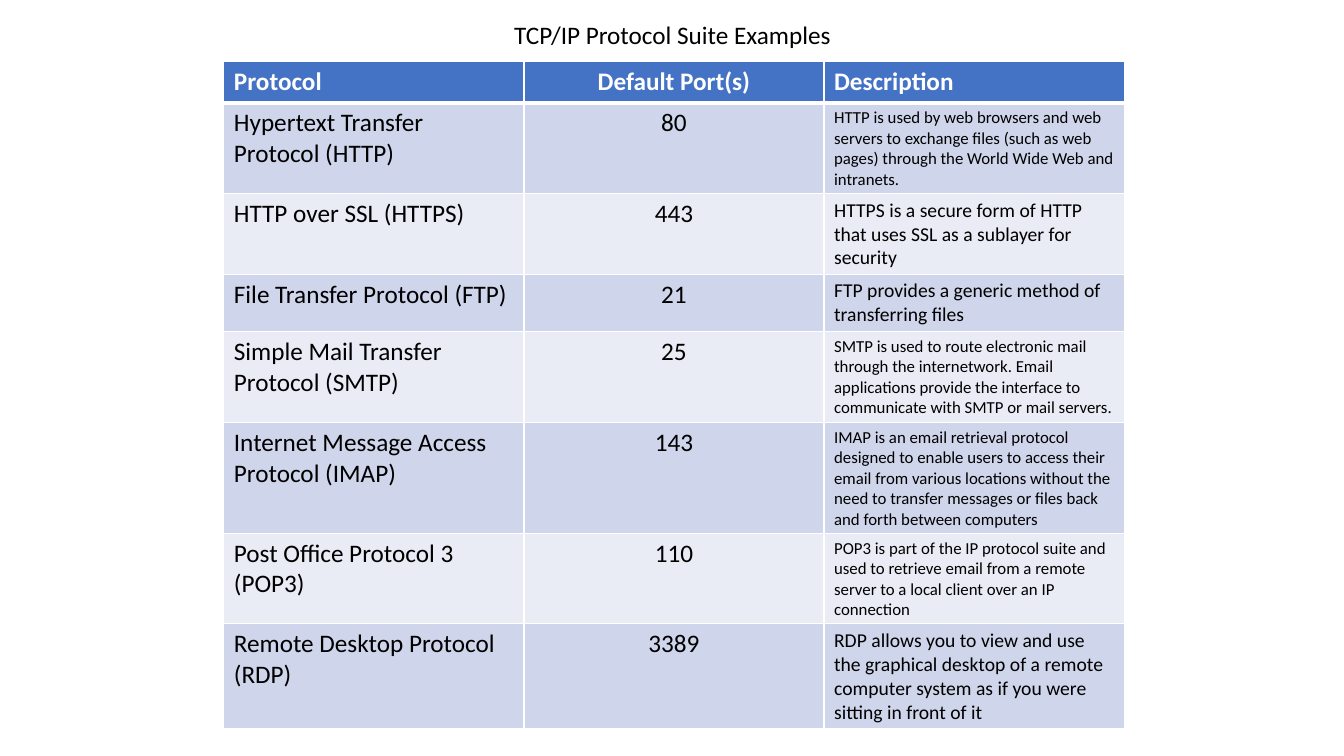
from dataclasses import dataclass

from lxml import etree
from pptx import Presentation
from pptx.dml.color import RGBColor
from pptx.enum.text import MSO_ANCHOR, MSO_AUTO_SIZE, PP_ALIGN
from pptx.oxml.ns import qn
from pptx.util import Inches, Pt

LEFT = PP_ALIGN.LEFT
CENTER = PP_ALIGN.CENTER
TOP = MSO_ANCHOR.TOP
FIT_SHAPE = MSO_AUTO_SIZE.SHAPE_TO_FIT_TEXT
TITLE_ONLY = 5


@dataclass(frozen=True)
class Theme:
    font: str = "Calibri"
    text: str = "000000"
    header_text: str = "FFFFFF"
    header_fill: str = "4472C4"
    bands: tuple = ("CFD5EA", "E9EBF5")
    border: str = "FFFFFF"
    thin: float = 1
    thick: float = 3
    body: int = 18
    medium: int = 14
    small: int = 12


THEME = Theme()
HEADINGS = ("Protocol", "Default Port(s)", "Description")
PROTOCOLS = (
    ("Hypertext Transfer Protocol (HTTP)", "80",
     "HTTP is used by web browsers and web servers to exchange files (such as web pages) "
     "through the World Wide Web and intranets.", THEME.small),
    ("HTTP over SSL (HTTPS)", "443",
     "HTTPS is a secure form of HTTP that uses SSL as a sublayer for security", THEME.medium),
    ("File Transfer Protocol (FTP)", "21",
     "FTP provides a generic method of transferring files", THEME.medium),
    ("Simple Mail Transfer Protocol (SMTP)", "25",
     "SMTP is used to route electronic mail through the internetwork. Email applications "
     "provide the interface to communicate with SMTP or mail servers.", THEME.small),
    ("Internet Message Access Protocol (IMAP)", "143",
     "IMAP is an email retrieval protocol designed to enable users to access their email "
     "from various locations without the need to transfer messages or files back and forth "
     "between computers", THEME.small),
    ("Post Office Protocol 3 (POP3)", "110",
     "POP3 is part of the IP protocol suite and used to retrieve email from a remote server "
     "to a local client over an IP connection", THEME.small),
    ("Remote Desktop Protocol (RDP)", "3389",
     "RDP allows you to view and use the graphical desktop of a remote computer system as if "
     "you were sitting in front of it", THEME.medium),
)


def write_text(frame, text, size=THEME.body, color=THEME.text, bold=False, align=LEFT):
    paragraph = frame.paragraphs[0]
    paragraph.alignment = align
    run = paragraph.add_run()
    run.text = text
    run.font.name = THEME.font
    run.font.size = Pt(size)
    run.font.bold = bold
    run.font.color.rgb = RGBColor.from_string(color)


def set_borders(cell, top, bottom):
    properties = cell._tc.get_or_add_tcPr()
    widths = {"a:lnL": THEME.thin, "a:lnR": THEME.thin, "a:lnT": top, "a:lnB": bottom}
    for position, (edge, width) in enumerate(widths.items()):
        line = etree.Element(qn(edge), w=str(Pt(width)))
        fill = etree.SubElement(line, qn("a:solidFill"))
        etree.SubElement(fill, qn("a:srgbClr"), val=THEME.border)
        properties.insert(position, line)


def fill_cell(cell, text, fill, top=THEME.thin, bottom=THEME.thin, **text_format):
    cell.fill.solid()
    cell.fill.fore_color.rgb = RGBColor.from_string(fill)
    set_borders(cell, top, bottom)
    write_text(cell.text_frame, text, **text_format)


def add_heading(slide, text):
    heading = slide.shapes.title
    heading.left, heading.top = Inches(5), Inches(0.14)
    heading.width, heading.height = Inches(3.42), Inches(0.4)
    frame = heading.text_frame
    frame.word_wrap = False
    frame.auto_size = FIT_SHAPE
    frame.vertical_anchor = TOP
    write_text(frame, text)


def add_protocol_table(slide):
    holder = slide.shapes.add_table(
        len(PROTOCOLS) + 1, len(HEADINGS),
        Inches(2.22), Inches(0.61), Inches(8.93), Inches(6.61))
    table = holder.table
    for row in table.rows:
        row.height = Inches(0.41)
    holder.height = Inches(6.61)

    alignments = (LEFT, CENTER, LEFT)
    for column, (heading, align) in enumerate(zip(HEADINGS, alignments)):
        fill_cell(table.cell(0, column), heading, THEME.header_fill, bottom=THEME.thick,
                  color=THEME.header_text, bold=True, align=align)

    for row, (*entries, description_size) in enumerate(PROTOCOLS, start=1):
        sizes = (THEME.body, THEME.body, description_size)
        top = THEME.thick if row == 1 else THEME.thin
        for column, (entry, size, align) in enumerate(zip(entries, sizes, alignments)):
            fill_cell(table.cell(row, column), entry, THEME.bands[(row - 1) % 2],
                      top=top, size=size, align=align)


def main():
    deck = Presentation()
    deck.slide_width, deck.slide_height = Inches(13.33), Inches(7.5)
    slide = deck.slides.add_slide(deck.slide_layouts[TITLE_ONLY])
    add_protocol_table(slide)
    add_heading(slide, "TCP/IP Protocol Suite Examples")
    deck.save("out.pptx")


if __name__ == "__main__":
    main()
